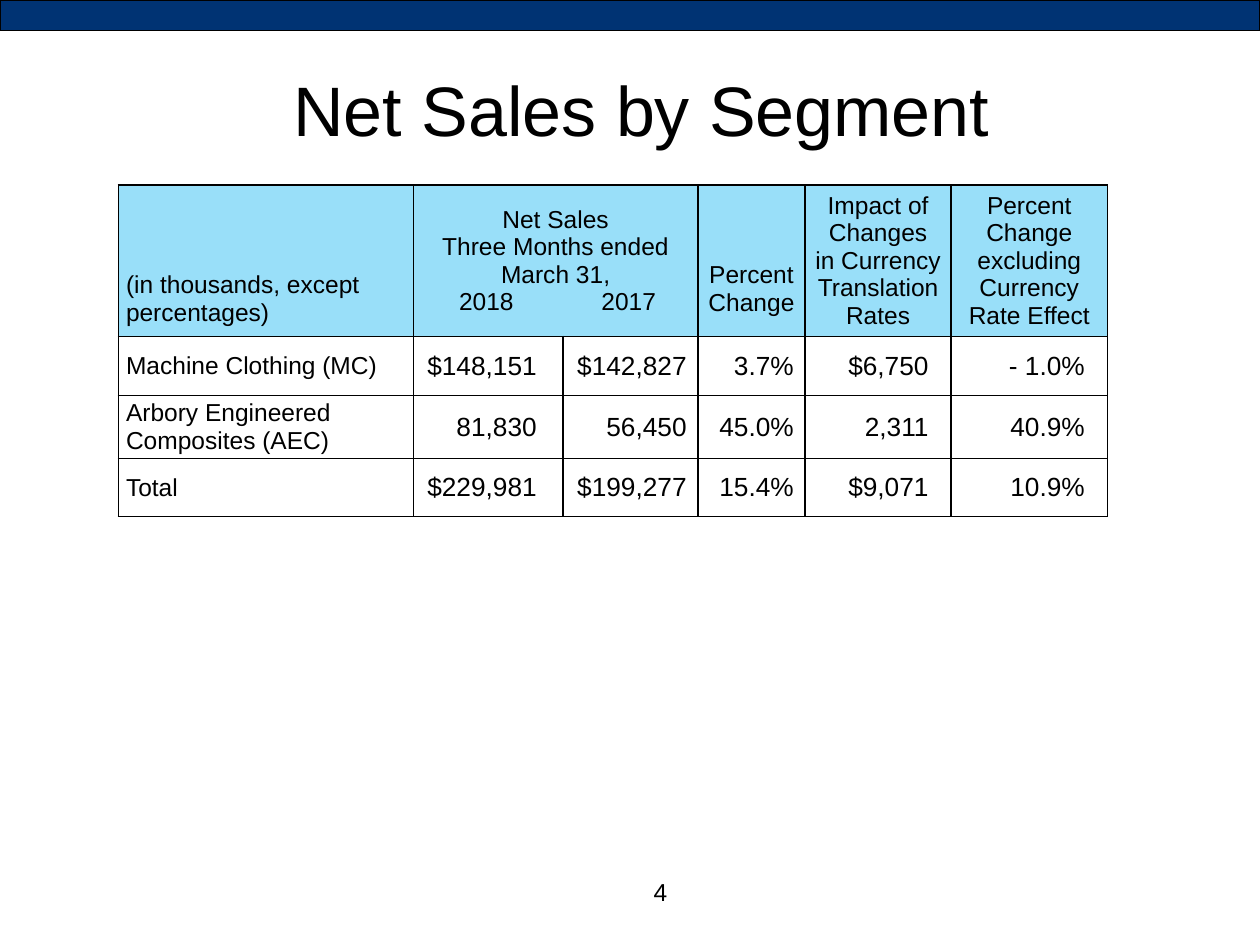
import pptx
import pptx.dml.color
import pptx.enum.shapes
import pptx.enum.text
import pptx.oxml
import pptx.oxml.ns
import pptx.util
from lxml import etree
from pptx.util import Inches

TITLE = "Net Sales by Segment"
PAGE_NUMBER = "4"
HEADERS = {
    0: ["(in thousands, except percentages)"],
    1: ["Net Sales", "Three Months ended", "March 31,", "\t2018\t2017"],
    3: ["Percent", "Change"],
    4: ["Impact of Changes", "in Currency", "Translation Rates"],
    5: ["Percent Change", "excluding Currency Rate Effect"],
}
SEGMENTS = [
    ["Machine Clothing (MC)", "$148,151", "$142,827", "3.7%", "$6,750", "- 1.0%"],
    ["Arbory Engineered Composites (AEC)", "81,830", "56,450", "45.0%", "2,311", "40.9%"],
    ["Total", "$229,981", "$199,277", "15.4%", "$9,071", "10.9%"],
]
COLUMN_WIDTHS = [2.34, 1.19, 1.07, 0.85, 1.16, 1.24]
ROW_HEIGHTS = [1.2, 0.47, 0.5, 0.46]
RIGHT_MARGINS = [0.06, 0.21, 0.09, 0.09, 0.18, 0.18]
YEAR_TABS = [0.52, 1.65]

BLACK, NAVY, SKY = "000000", "003373", "00B0F0"
LEFT, CENTER, RIGHT = (pptx.enum.text.PP_ALIGN.LEFT, pptx.enum.text.PP_ALIGN.CENTER,
                       pptx.enum.text.PP_ALIGN.RIGHT)
TOP, MIDDLE, BOTTOM = (pptx.enum.text.MSO_ANCHOR.TOP, pptx.enum.text.MSO_ANCHOR.MIDDLE,
                       pptx.enum.text.MSO_ANCHOR.BOTTOM)
qn = pptx.oxml.ns.qn


def rgb(color):
    return pptx.dml.color.RGBColor.from_string(color)


def write(frame, lines, size=14, align=LEFT):
    for index, line in enumerate(lines):
        para = frame.paragraphs[0] if index == 0 else frame.add_paragraph()
        para.alignment = align
        if "\t" in line:
            para.alignment = LEFT
            add_center_tabs(para, YEAR_TABS)
        span = para.add_run()
        span.text = line
        span.font.name = "Arial"
        span.font.size = pptx.util.Pt(size)
        span.font.color.rgb = rgb(BLACK)


def add_center_tabs(para, positions):
    tabs = etree.SubElement(para._p.get_or_add_pPr(), qn("a:tabLst"))
    for position in positions:
        etree.SubElement(tabs, qn("a:tab"), pos=str(Inches(position)), algn="ctr")


def add_borders(cell):
    properties = cell._tc.get_or_add_tcPr()
    for side in ("a:lnL", "a:lnR", "a:lnT", "a:lnB"):
        line = etree.SubElement(properties, qn(side), w=str(pptx.util.Pt(1)))
        fill = etree.SubElement(line, qn("a:solidFill"))
        etree.SubElement(fill, qn("a:srgbClr"), val=BLACK)


def fill_cell(cell, color, opacity):
    cell.fill.solid()
    cell.fill.fore_color.rgb = rgb(color)
    shade = cell._tc.tcPr.find(".//" + qn("a:solidFill") + "/" + qn("a:srgbClr") + "[@val='" + color + "']")
    etree.SubElement(shade, qn("a:alpha"), val=str(opacity * 1000))


def add_sales_table(page):
    frame = page.shapes.add_table(
        len(ROW_HEIGHTS), len(COLUMN_WIDTHS), Inches(0.94), Inches(1.47),
        Inches(sum(COLUMN_WIDTHS)), Inches(sum(ROW_HEIGHTS)))
    table = frame.table
    table.first_row = table.horz_banding = False
    for column, width in zip(table.columns, COLUMN_WIDTHS):
        column.width = Inches(width)
    for row, height in zip(table.rows, ROW_HEIGHTS):
        row.height = Inches(height)
    for cell in table.iter_cells():
        cell.margin_left = cell.margin_right = Inches(0.06)
        cell.margin_top = cell.margin_bottom = 0
        cell.vertical_anchor = MIDDLE
        add_borders(cell)
        cell.fill.background()

    table.cell(0, 1).merge(table.cell(0, 2))
    for index in range(len(COLUMN_WIDTHS)):
        fill_cell(table.cell(0, index), SKY, 40)
    for index, lines in HEADERS.items():
        write(table.cell(0, index).text_frame, lines, align=CENTER if index else LEFT)
    table.cell(0, 0).vertical_anchor = table.cell(0, 3).vertical_anchor = BOTTOM
    table.cell(0, 0).margin_bottom = Inches(0.08)
    table.cell(0, 3).margin_bottom = Inches(0.16)

    for row, values in enumerate(SEGMENTS, start=1):
        for column, value in enumerate(values):
            cell = table.cell(row, column)
            cell.margin_right = Inches(RIGHT_MARGINS[column])
            if column:
                write(cell.text_frame, [value], size=15, align=RIGHT)
            else:
                write(cell.text_frame, [value])


def main():
    deck = pptx.Presentation()
    deck.slide_width, deck.slide_height = Inches(10), Inches(7.5)
    page = deck.slides.add_slide(deck.slide_layouts[5])

    band = page.shapes.add_shape(pptx.enum.shapes.MSO_SHAPE.RECTANGLE,
                                 0, 0, Inches(10), Inches(0.24))
    band.shadow.inherit = False
    band.fill.solid()
    band.fill.fore_color.rgb = rgb(NAVY)
    band.line.color.rgb = rgb(BLACK)
    band.line.width = pptx.util.Pt(0.75)

    title = page.shapes.title
    title.left, title.top = Inches(0.59), Inches(0.48)
    title.width, title.height = Inches(9), Inches(1.25)
    title.text_frame.vertical_anchor = TOP
    write(title.text_frame, [TITLE], size=40, align=CENTER)

    add_sales_table(page)

    number = page.shapes.add_textbox(Inches(5.09), Inches(6.91), Inches(0.34), Inches(0.34))
    number.text_frame.word_wrap = True
    write(number.text_frame, [PAGE_NUMBER])

    deck.save("out.pptx")


if __name__ == "__main__":
    main()
